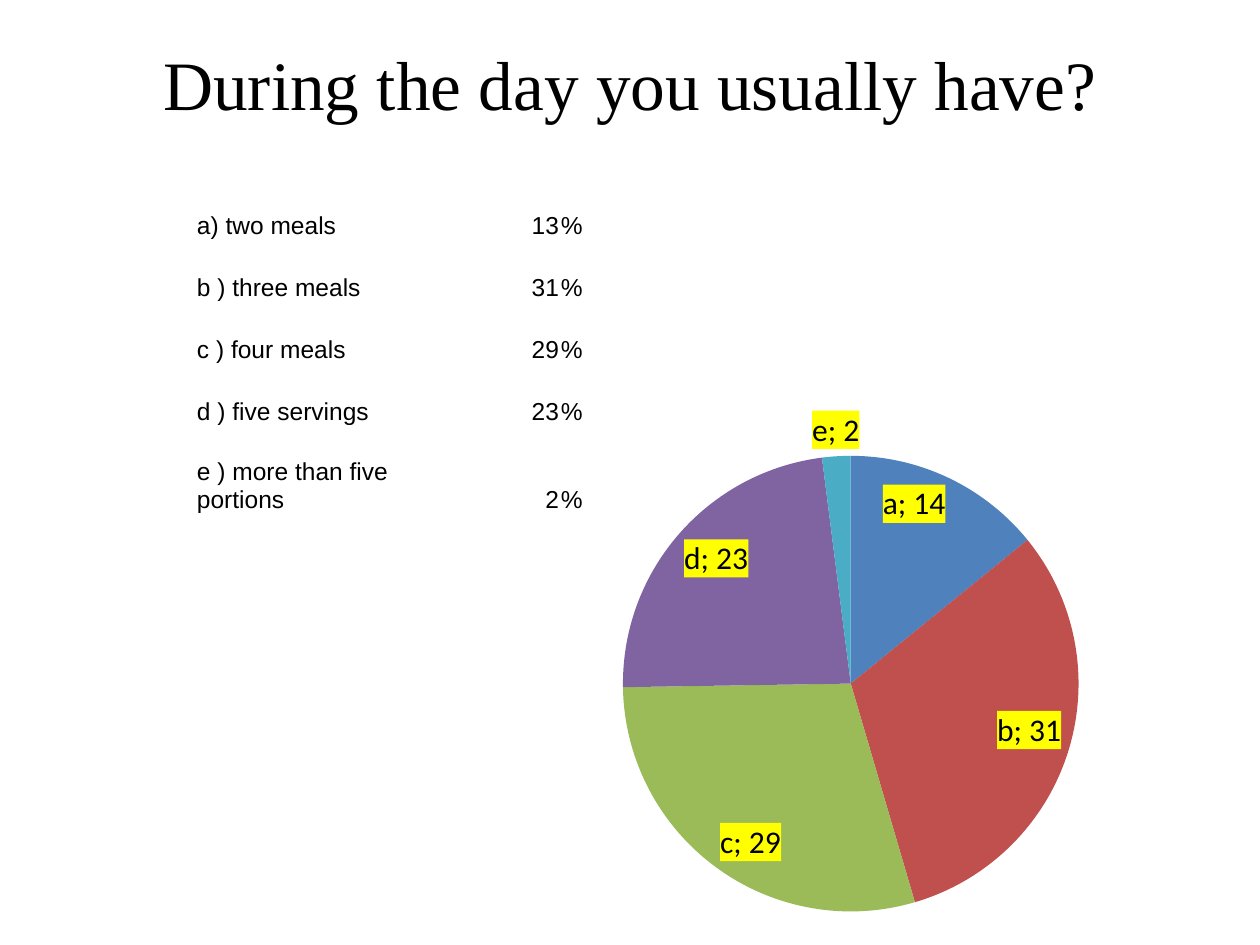
from lxml import etree
from pptx import Presentation
from pptx import util as u
from pptx.chart.data import CategoryChartData
from pptx.dml.color import RGBColor
from pptx.enum import chart as charts, text
from pptx.oxml import parse_xml
from pptx.oxml.ns import nsdecls, qn

PX = u.Inches(1) // 126
COLORS = {
    "text": "000000", "label": "FFFF00",
    "a": "4F81BD", "b": "C0504D", "c": "9BBB59", "d": "8064A2", "e": "4BACC6",
}
MEALS = [
    ("a) two meals", "13"),
    ("b ) three meals", "31"),
    ("c ) four meals", "29"),
    ("d ) five servings", "23"),
    ("e ) more than five portions", "2"),
]
COUNTS = {"a": 14, "b": 31, "c": 29, "d": 23, "e": 2}


def color(name):
    return RGBColor.from_string(COLORS[name])


def box(*lengths):
    return [length * PX for length in lengths]


class SlideBuilder:
    def __init__(self, slide):
        self.slide = slide

    def style(self, font, name, size):
        font.name, font.size = name, u.Pt(size)
        font.color.rgb = color("text")

    def title(self, words, bounds):
        frame = self.slide.shapes.add_textbox(*box(*bounds)).text_frame
        frame.word_wrap = True
        frame.margin_top = 3 * PX
        frame.text = words
        paragraph = frame.paragraphs[0]
        paragraph.alignment = text.PP_ALIGN.CENTER
        self.style(paragraph.runs[0].font, "Times New Roman", 39.6)

    def cell(self, cell, words, align=text.PP_ALIGN.LEFT):
        cell.text = words
        paragraph = cell.text_frame.paragraphs[0]
        paragraph.alignment = align
        for run in paragraph.runs:
            self.style(run.font, "Arial", 14)

    def table(self, meals, left, top, column, heights):
        """Put each meal on every second row, from the third row on."""
        table = self.slide.shapes.add_table(
            len(heights), 6, *box(left, top, 6 * column, sum(heights))).table
        table.first_row = table.horz_banding = False
        for table_column in table.columns:
            table_column.width = column * PX
        for row, height in zip(table.rows, heights):
            row.height = height * PX
        for cell in table.iter_cells():
            cell.fill.background()
            cell.vertical_anchor = text.MSO_ANCHOR.BOTTOM
            cell.margin_left = cell.margin_right = cell.margin_top = PX
            cell.margin_bottom = 0
            # Small empty paragraphs keep the spacer rows low
            end = etree.SubElement(cell.text_frame.paragraphs[0]._p, qn("a:endParaRPr"))
            end.set("sz", "1000")
        table.cell(0, 1).merge(table.cell(0, 5))
        for index, (meal, share) in enumerate(meals):
            row = 2 * index + 2
            last = 3 if index == len(meals) - 1 else 2
            table.cell(row, 1).merge(table.cell(row, last))
            self.cell(table.cell(row, 1), meal)
            self.cell(table.cell(row, 4), share, text.PP_ALIGN.RIGHT)
            self.cell(table.cell(row, 5), "%")

    def pie(self, counts, bounds):
        data = CategoryChartData(number_format="0")
        data.categories = list(counts)
        data.add_series("Series 1", list(counts.values()))
        chart = self.slide.shapes.add_chart(
            charts.XL_CHART_TYPE.PIE, *box(*bounds), data).chart
        chart.has_legend = chart.has_title = False
        self.style(chart.font, "Calibri", 10)
        plot = chart.plots[0]
        plot.vary_by_categories = True
        self.plot_area(chart, x=0.183, y=0.117, w=0.632, h=0.849)
        for index, (name, count) in enumerate(counts.items()):
            point = plot.series[0].points[index]
            point.format.fill.solid()
            point.format.fill.fore_color.rgb = color(name)
            place = charts.XL_LABEL_POSITION
            self.label(point.data_label, place.INSIDE_END if count > 5 else place.OUTSIDE_END)
        for label in chart.element.iter(qn("c:dLbl")):
            self.label_extras(label)

    def plot_area(self, chart, **parts):
        area = chart.element.find(".//" + qn("c:plotArea"))
        for old in area.findall(qn("c:layout")):
            area.remove(old)
        values = "".join(f'<c:{key} val="{value}"/>' for key, value in parts.items())
        area.insert(0, parse_xml(
            f'<c:layout {nsdecls("c")}><c:manualLayout><c:layoutTarget val="inner"/>'
            f'<c:xMode val="edge"/><c:yMode val="edge"/>{values}'
            '</c:manualLayout></c:layout>'))

    def label(self, label, position):
        self.style(label.font, "Calibri", 18)
        label.position = position

    def label_extras(self, label):
        """Show category and value on a coloured background."""
        label.find(qn("c:showCatName")).set("val", "1")
        label.find(qn("c:txPr")).addprevious(parse_xml(
            f'<c:spPr {nsdecls("c", "a")}><a:solidFill>'
            f'<a:srgbClr val="{COLORS["label"]}"/></a:solidFill></c:spPr>'))
        label.find(qn("c:showBubbleSize")).addnext(parse_xml(
            f'<c:separator {nsdecls("c")}>; </c:separator>'))


def main():
    presentation = Presentation()
    presentation.slide_width, presentation.slide_height = u.Inches(10), u.Inches(7.5)
    builder = SlideBuilder(presentation.slides.add_slide(presentation.slide_layouts[6]))
    builder.title("During the day you usually have?", (63, 38, 1134, 158))
    builder.table(MEALS, 105, 144, 91, [34, 28] * 5 + [57])
    builder.pie(COUNTS, (491, 393, 721, 537))
    presentation.save("out.pptx")


if __name__ == "__main__":
    main()
